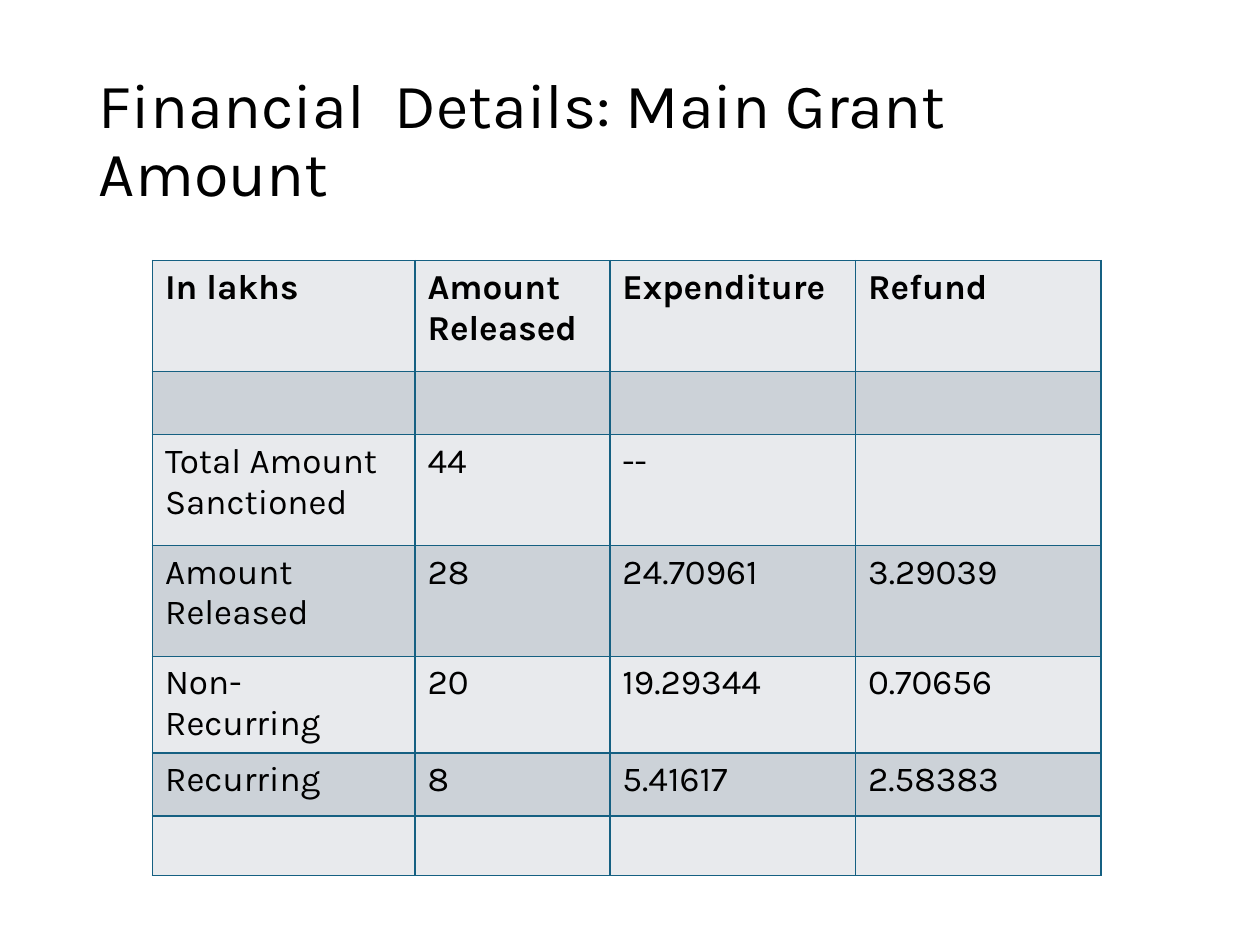
from lxml import etree
from pptx import Presentation
from pptx.dml.color import RGBColor
from pptx.enum.text import MSO_ANCHOR
from pptx.oxml.ns import qn
from pptx.util import Pt

MIDDLE = MSO_ANCHOR.MIDDLE
FONT = "Karla"
COLORS = {"text": "000000", "light": "E8EAED", "dark": "CCD2D8", "border": "156082"}

# Content
TITLE = "Financial  Details: Main Grant Amount"
ROWS = [
    ("In lakhs", "Amount Released", "Expenditure", "Refund"),
    ("", "", "", ""),
    ("Total Amount Sanctioned", "44", "--", ""),
    ("Amount Released", "28", "24.70961", "3.29039"),
    ("Non- Recurring", "20", "19.29344", "0.70656"),
    ("Recurring", "8", "5.41617", "2.58383"),
    ("", "", "", ""),
]
COL_WIDTHS = [150, 111.4, 140.4, 140.4]
TALL, SHORT = 63.4, 36
ROW_HEIGHTS = [TALL, SHORT, TALL, TALL, SHORT, SHORT, 33.8]


def color(name):
    return RGBColor.from_string(COLORS[name])


def write(tf, text, size=20, bold=False, spacing=None):
    tf.word_wrap = True
    p = tf.paragraphs[0]
    if spacing:
        p.line_spacing = spacing
    if not text:
        p.font.size = Pt(size)
        return
    r = p.add_run()
    r.text = text
    r.font.name = FONT
    r.font.size = Pt(size)
    r.font.bold = bold
    r.font.color.rgb = color("text")


def set_borders(cell, name, width):
    # Border lines must come before the fill in the cell properties
    tc_pr = cell._tc.get_or_add_tcPr()
    for i, side in enumerate(("lnL", "lnR", "lnT", "lnB")):
        ln = etree.Element(qn(f"a:{side}"), w=str(Pt(width)))
        fill = etree.SubElement(ln, qn("a:solidFill"))
        etree.SubElement(fill, qn("a:srgbClr"), val=COLORS[name])
        tc_pr.insert(i, ln)


prs = Presentation()
prs.slide_width, prs.slide_height = Pt(720), Pt(540)
s = prs.slides.add_slide(prs.slide_layouts[6])

# Title
tf = s.shapes.add_textbox(Pt(49.5), Pt(28.8), Pt(621), Pt(104.4)).text_frame
tf.vertical_anchor = MIDDLE
write(tf, TITLE, size=36, spacing=0.9)

# Grant table
table = s.shapes.add_table(
    len(ROWS), len(COL_WIDTHS), Pt(87.1), Pt(149),
    Pt(sum(COL_WIDTHS)), Pt(sum(ROW_HEIGHTS)),
).table
for col, width in zip(table.columns, COL_WIDTHS):
    col.width = Pt(width)
for i, (row, height, values) in enumerate(zip(table.rows, ROW_HEIGHTS, ROWS)):
    row.height = Pt(height)
    for cell, value in zip(row.cells, values):
        cell.fill.solid()
        cell.fill.fore_color.rgb = color("dark" if i % 2 else "light")
        set_borders(cell, "border", 1)
        write(cell.text_frame, value, bold=i == 0)

prs.save("out.pptx")
